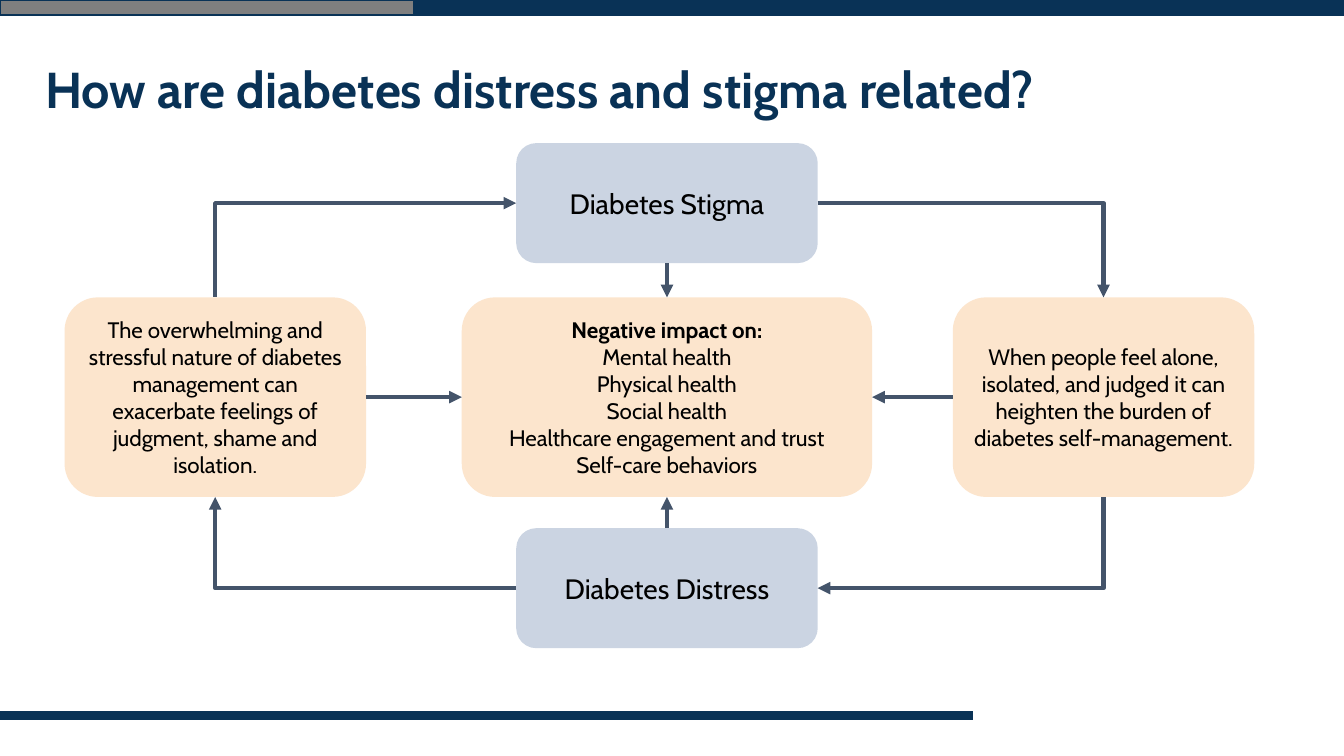
from lxml.etree import SubElement
from pptx import Presentation
from pptx.dml.color import RGBColor
from pptx.enum.shapes import MSO_CONNECTOR, MSO_SHAPE
from pptx.enum.text import MSO_ANCHOR, PP_ALIGN
from pptx.oxml.ns import qn
from pptx.util import Inches, Pt

NAVY = RGBColor(0x09, 0x32, 0x56)
GRAY = RGBColor(0x7F, 0x7F, 0x7F)
SLATE = RGBColor(0x44, 0x54, 0x6A)
PEACH = RGBColor(0xFC, 0xE5, 0xCD)
PALE_BLUE = RGBColor(0xCB, 0xD4, 0xE2)
BLACK = RGBColor(0, 0, 0)

TOP, LEFT, BOTTOM, RIGHT = range(4)
CONCEPT = {"color": PALE_BLUE, "size": 20}
EFFECT = {"color": PEACH, "size": 16}

BOXES = {
    "overwhelm": ((0.64, 2.95, 2.99, 1.98), EFFECT, [
        "The overwhelming and stressful nature of diabetes management can "
        "exacerbate feelings of judgment, shame and isolation."]),
    "stigma": ((5.12, 1.42, 2.99, 1.19), CONCEPT, ["Diabetes Stigma"]),
    "isolation": ((9.45, 2.95, 2.99, 1.98), EFFECT, [
        "When people feel alone, isolated, and judged it can heighten the "
        "burden of diabetes self-management."]),
    "distress": ((5.12, 5.24, 2.99, 1.19), CONCEPT, ["Diabetes Distress"]),
    "impact": ((4.58, 2.95, 4.07, 1.98), EFFECT, [
        "Negative impact on:", "Mental health", "Physical health",
        "Social health", "Healthcare engagement and trust",
        "Self-care behaviors"]),
}

ARROWS = [
    ("stigma", LEFT, "overwhelm", TOP, "a:headEnd"),
    ("stigma", RIGHT, "isolation", TOP, "a:tailEnd"),
    ("distress", RIGHT, "isolation", BOTTOM, "a:headEnd"),
    ("distress", LEFT, "overwhelm", BOTTOM, "a:tailEnd"),
    ("stigma", BOTTOM, "impact", TOP, "a:tailEnd"),
    ("isolation", LEFT, "impact", RIGHT, "a:tailEnd"),
    ("distress", TOP, "impact", BOTTOM, "a:tailEnd"),
    ("overwhelm", RIGHT, "impact", LEFT, "a:tailEnd"),
]


def set_font(paragraph, **values):
    """Apply the slide font and the given values to a paragraph."""
    color = values.pop("color")
    for name, value in {"name": "Cabin", **values}.items():
        setattr(paragraph.font, name, value)
    paragraph.font.color.rgb = color


def add_filled_shape(slide, kind, box, color):
    """Add a shape with a plain fill, no outline and no shadow."""
    shape = slide.shapes.add_shape(kind, *map(Inches, box))
    shape.shadow.inherit = False
    shape.fill.solid()
    shape.fill.fore_color.rgb = color
    shape.line.fill.background()
    return shape


def add_line(slide, kind, start, end, color, width):
    """Add a connector without a shadow between two points in inches."""
    line = slide.shapes.add_connector(kind, *map(Inches, (*start, *end)))
    line.line.color.rgb = color
    line.line.width = Pt(width)
    SubElement(line.element.spPr, qn("a:effectLst"))
    return line


def add_frame(slide, box):
    """Draw the bands along the top and bottom edges of the given box."""
    left, top, width, height = box
    split = left + 4.1
    for x, right, color in ((split - 0.05, left + width, NAVY), (left, split, GRAY)):
        band = add_filled_shape(slide, MSO_SHAPE.RECTANGLE,
                                (x, top, right - x, 0.15), color)
        band.line.color.rgb = NAVY
        band.line.width = Pt(1)
    bottom = top + height - 0.4
    add_line(slide, MSO_CONNECTOR.STRAIGHT, (left, bottom),
             (left + 9.65, bottom), NAVY, 6)


def add_title(slide, box, text):
    """Write the slide title inside the given box."""
    frame = slide.shapes.add_textbox(*map(Inches, box)).text_frame
    frame.word_wrap = True
    frame.vertical_anchor = MSO_ANCHOR.MIDDLE
    paragraph = frame.paragraphs[0]
    paragraph.text = text
    paragraph.line_spacing = 0.9
    set_font(paragraph, size=Pt(36), bold=True, color=NAVY)


def add_box(slide, box, style, lines):
    """Add a rounded box of centred lines, the first bold if there are several."""
    shape = add_filled_shape(slide, MSO_SHAPE.ROUNDED_RECTANGLE, box, style["color"])
    frame = shape.text_frame
    settings = {"word_wrap": True, "vertical_anchor": MSO_ANCHOR.MIDDLE}
    for side in ("left", "top", "right", "bottom"):
        settings[f"margin_{side}"] = Inches(0.1)
    for name, value in settings.items():
        setattr(frame, name, value)
    for index, line in enumerate(lines):
        paragraph = frame.add_paragraph() if index else frame.paragraphs[0]
        paragraph.text = line
        paragraph.alignment = PP_ALIGN.CENTER
        set_font(paragraph, size=Pt(style["size"]),
                 bold=index == 0 and len(lines) > 1, color=BLACK)
    return shape


def add_arrow(slide, source, source_side, target, target_side, arrowhead):
    """Join two boxes, with one right-angle bend where their sides differ in axis."""
    bent = source_side % 2 != target_side % 2
    kind = MSO_CONNECTOR.ELBOW if bent else MSO_CONNECTOR.STRAIGHT
    arrow = add_line(slide, kind, (0, 0), (0, 0), SLATE, 3)
    arrow.begin_connect(source, source_side)
    arrow.end_connect(target, target_side)
    properties = arrow.element.spPr
    if bent:
        properties.find(qn("a:prstGeom")).set("prst", "bentConnector2")
    SubElement(properties.find(qn("a:ln")), qn(arrowhead), type="triangle")


def add_diagram(slide, origin):
    """Draw the boxes and the arrows between them, offset by the origin."""
    shapes = {}
    for name, ((x, y, width, height), style, lines) in BOXES.items():
        box = (origin[0] + x, origin[1] + y, width, height)
        shapes[name] = add_box(slide, box, style, lines)
    for source, source_side, target, target_side, arrowhead in ARROWS:
        add_arrow(slide, shapes[source], source_side,
                  shapes[target], target_side, arrowhead)


def main():
    """Build and save the presentation."""
    presentation = Presentation()
    presentation.slide_width = Inches(13.33)
    presentation.slide_height = Inches(7.5)
    slide = presentation.slides.add_slide(presentation.slide_layouts[6])
    add_frame(slide, (0, 0, 13.33, 7.5))
    add_title(slide, (0.35, 0.4, 12.51, 1.02),
              "How are diabetes distress and stigma related?")
    add_diagram(slide, (0, 0))
    presentation.save("out.pptx")


if __name__ == "__main__":
    main()
